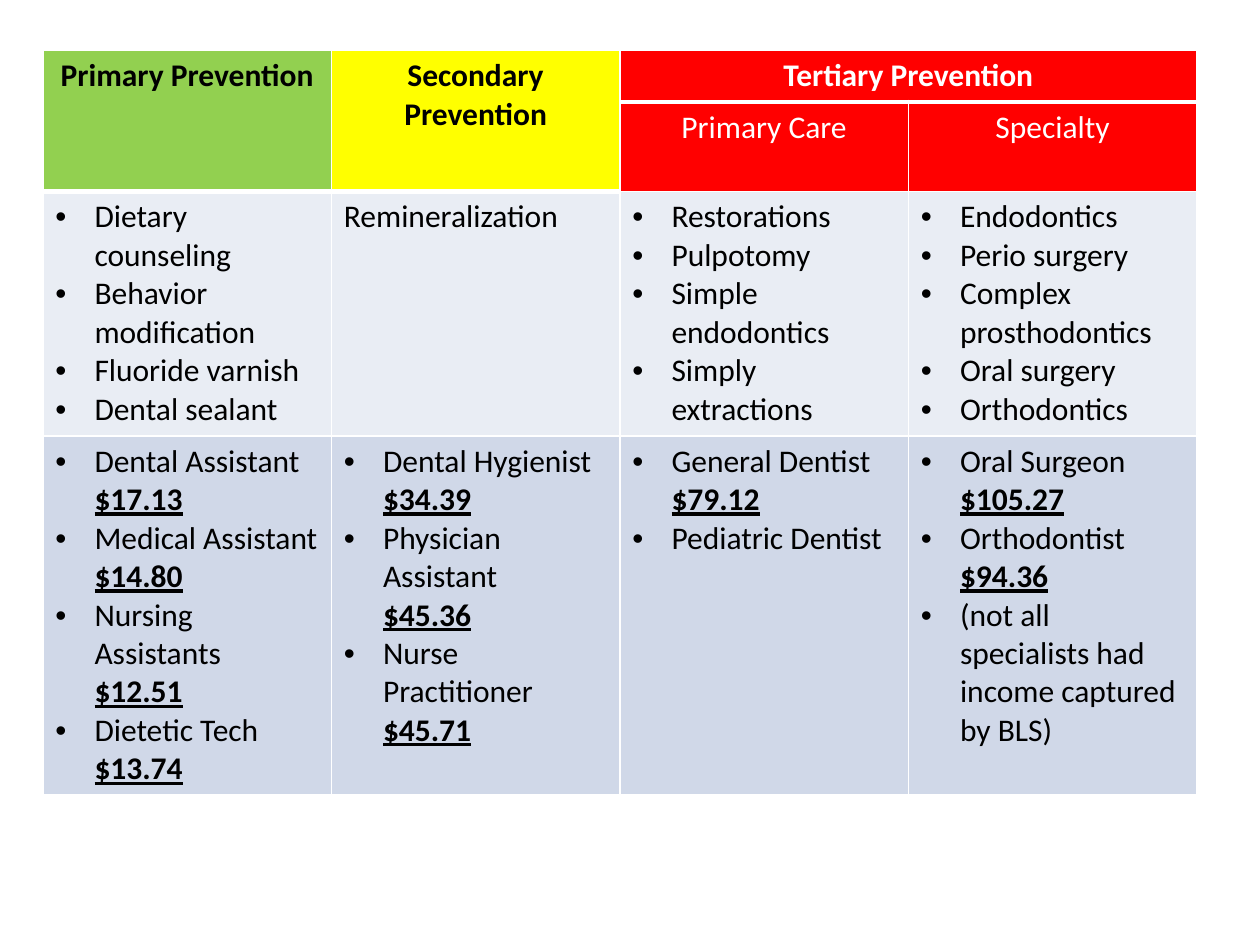
from lxml.etree import SubElement
from pptx import Presentation
from pptx.dml.color import RGBColor
from pptx.enum.text import PP_ALIGN as Align
from pptx.oxml.ns import qn
from pptx.util import Inches, Pt

BLACK = RGBColor(0x00, 0x00, 0x00)
WHITE = RGBColor(0xFF, 0xFF, 0xFF)
GREEN = RGBColor(0x92, 0xD0, 0x50)
YELLOW = RGBColor(0xFF, 0xFF, 0x00)
RED = RGBColor(0xFF, 0x00, 0x00)
PALE_BLUE = RGBColor(0xE9, 0xED, 0xF4)
LIGHT_BLUE = RGBColor(0xD0, 0xD8, 0xE8)

COLUMN_WIDTH = 2.29
ROW_HEIGHTS = [0.41, 0.7, 1.94, 2.84]

HEADINGS = [
    (0, 0, "Primary Prevention", GREEN, BLACK, True),
    (0, 1, "Secondary Prevention", YELLOW, BLACK, True),
    (0, 2, "Tertiary Prevention", RED, WHITE, True),
    (1, 2, "Primary Care", RED, WHITE, False),
    (1, 3, "Specialty", RED, WHITE, False),
]
SERVICES = [
    ["Dietary counseling", "Behavior modification", "Fluoride varnish", "Dental sealant"],
    ["Remineralization"],
    ["Restorations", "Pulpotomy", "Simple endodontics", "Simply extractions"],
    ["Endodontics", "Perio surgery", "Complex prosthodontics", "Oral surgery", "Orthodontics"],
]
PROVIDERS = [
    [("Dental Assistant", "$17.13"), ("Medical Assistant", "$14.80"),
     ("Nursing Assistants", "$12.51"), ("Dietetic Tech", "$13.74")],
    [("Dental Hygienist", "$34.39"), ("Physician Assistant", "$45.36"),
     ("Nurse Practitioner", "$45.71")],
    [("General Dentist", "$79.12"), ("Pediatric Dentist", None)],
    [("Oral Surgeon", "$105.27"), ("Orthodontist", "$94.36"),
     ("(not all specialists had income captured by BLS)", None)],
]


def add_run(paragraph, text, color=BLACK, bold=False, underline=False):
    run = paragraph.add_run()
    run.text = text
    font = run.font
    font.name = "Calibri"
    font.size = Pt(18)
    font.bold = bold
    font.underline = underline
    font.color.rgb = color


def add_bullet(paragraph):
    properties = paragraph._p.get_or_add_pPr()
    properties.set("marL", str(Inches(0.31)))
    properties.set("indent", str(-Inches(0.31)))
    SubElement(properties, qn("a:buFont"), typeface="Arial")
    SubElement(properties, qn("a:buChar"), char="•")


def add_border(cell, side, points):
    line = SubElement(cell._tc.get_or_add_tcPr(), qn(f"a:ln{side}"), w=str(Pt(points)))
    fill = SubElement(line, qn("a:solidFill"))
    SubElement(fill, qn("a:srgbClr"), val=str(WHITE))


def add_borders(cell, row, column):
    add_border(cell, "L", 1)
    add_border(cell, "R", 1)
    if row == 0:
        add_border(cell, "T", 1)
    under_heading = row == 0 or (row == 1 and column < 2)
    add_border(cell, "B", 3 if under_heading else 1)


def set_fill(cell, color):
    cell.fill.solid()
    cell.fill.fore_color.rgb = color


def fill_heading(cell, text, background, color, bold):
    set_fill(cell, background)
    paragraph = cell.text_frame.paragraphs[0]
    paragraph.alignment = Align.CENTER
    add_run(paragraph, text, color, bold)


def fill_list(cell, entries, background, bulleted=True):
    set_fill(cell, background)
    frame = cell.text_frame
    for index, (label, wage) in enumerate(entries):
        paragraph = frame.add_paragraph() if index else frame.paragraphs[0]
        if bulleted:
            add_bullet(paragraph)
        add_run(paragraph, label)
        if wage:
            paragraph.add_line_break()
            add_run(paragraph, wage, bold=True, underline=True)


def add_prevention_table(slide):
    table = slide.shapes.add_table(
        4, 4, Inches(0.34), Inches(0.4),
        Inches(4 * COLUMN_WIDTH), Inches(sum(ROW_HEIGHTS))).table
    for column in table.columns:
        column.width = Inches(COLUMN_WIDTH)
    for row, height in zip(table.rows, ROW_HEIGHTS):
        row.height = Inches(height)
    for row in range(4):
        for column in range(4):
            add_borders(table.cell(row, column), row, column)
    for column in range(2):
        table.cell(0, column).merge(table.cell(1, column))
    table.cell(0, 2).merge(table.cell(0, 3))
    return table


def main():
    deck = Presentation()
    deck.slide_width = Inches(10)
    deck.slide_height = Inches(7.5)
    slide = deck.slides.add_slide(deck.slide_layouts[6])
    table = add_prevention_table(slide)
    for row, column, *heading in HEADINGS:
        fill_heading(table.cell(row, column), *heading)
    for column, (services, providers) in enumerate(zip(SERVICES, PROVIDERS)):
        entries = [(service, None) for service in services]
        fill_list(table.cell(2, column), entries, PALE_BLUE, len(entries) > 1)
        fill_list(table.cell(3, column), providers, LIGHT_BLUE)
    deck.save("out.pptx")


if __name__ == "__main__":
    main()
